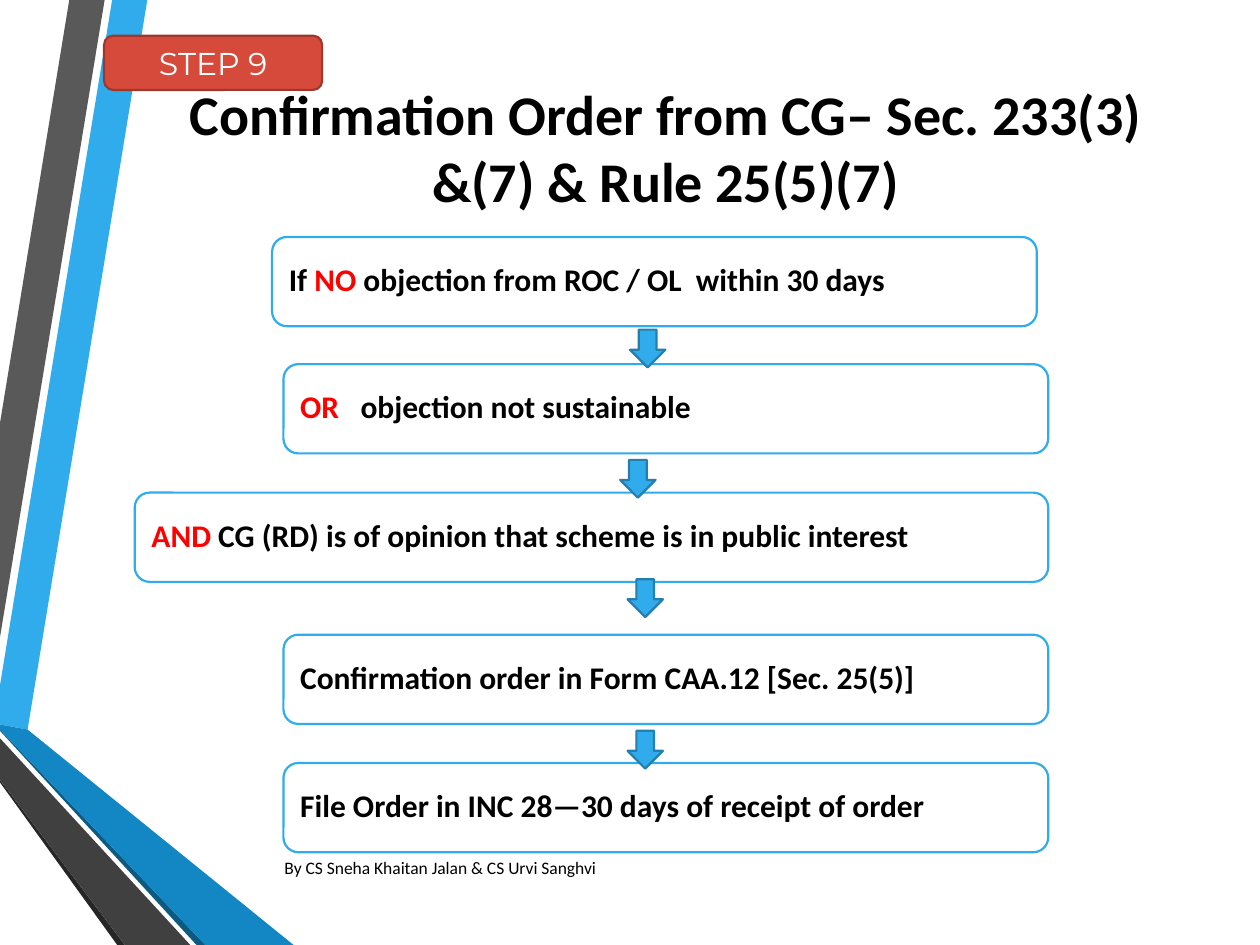
from pptx import Presentation
from pptx.dml.color import RGBColor
from pptx.enum.shapes import MSO_SHAPE as Shape
from pptx.enum.text import MSO_ANCHOR as Anchor, MSO_AUTO_SIZE as AutoSize, PP_ALIGN as Align
from pptx.util import Pt

COLORS = {
    "white": "FFFFFF", "black": "000000", "accent": "FF0000",
    "blue": "30ACEC", "blue_edge": "247FAF", "blue_mid": "1287C3", "blue_dark": "0C5A82",
    "red": "D64A3B", "red_edge": "9E372C",
    "gray": "595959", "gray_mid": "404040", "gray_dark": "262626",
}


class SlideBuilder:
    font = "Calibri"
    line_width = 1.25

    def __init__(self, slide):
        self.s = slide

    def color(self, name):
        return RGBColor.from_string(COLORS[name])

    def paint(self, sp, fill, line=None):
        sp.shadow.inherit = False
        sp.fill.solid()
        sp.fill.fore_color.rgb = self.color(fill)
        if line:
            sp.line.color.rgb = self.color(line)
            sp.line.width = Pt(self.line_width)
        else:
            sp.line.fill.background()

    def add_runs(self, sp, runs, size, bold=False, align=Align.LEFT, font=None, spacing=None):
        tf = sp.text_frame
        tf.word_wrap = True
        tf.auto_size = AutoSize.NONE
        tf.vertical_anchor = Anchor.MIDDLE
        p = tf.paragraphs[0]
        p.alignment = align
        if spacing:
            p.line_spacing = spacing
        for text, color in runs:
            r = p.add_run()
            r.text = text
            r.font.name = font or self.font
            r.font.size = Pt(size)
            r.font.bold = bold
            r.font.color.rgb = self.color(color)

    def band(self, fill, points):
        pts = [(Pt(x), Pt(y)) for x, y in points]
        builder = self.s.shapes.build_freeform(*pts[0])
        builder.add_line_segments(pts[1:], close=True)
        self.paint(builder.convert_to_shape(), fill)

    def shape(self, kind, x, y, w, h, fill, line):
        sp = self.s.shapes.add_shape(kind, Pt(x), Pt(y), Pt(w), Pt(h))
        self.paint(sp, fill, line)
        return sp

    def title(self, x, y, w, h, text):
        sp = self.s.shapes.title
        sp.left, sp.top, sp.width, sp.height = Pt(x), Pt(y), Pt(w), Pt(h)
        self.add_runs(sp, [(text, "black")], 32, bold=True, align=Align.CENTER)

    def caption(self, x, y, w, h, text):
        sp = self.s.shapes.add_textbox(Pt(x), Pt(y), Pt(w), Pt(h))
        self.add_runs(sp, [(text, "black")], 10)

    def badge(self, x, y, w, h, text):
        sp = self.shape(Shape.ROUNDED_RECTANGLE, x, y, w, h, "red", "red_edge")
        self.add_runs(sp, [(text, "white")], 18, align=Align.CENTER, font="Montserrat")

    def step(self, x, y, w, runs):
        sp = self.shape(Shape.ROUNDED_RECTANGLE, x, y, w, 51, "white", "blue")
        self.add_runs(sp, runs, 18, bold=True, align=Align.JUSTIFY, spacing=0.9)

    def arrow(self, x, y):
        self.shape(Shape.DOWN_ARROW, x, y, 20.2, 21.6, "blue", "blue_edge")


# Corner bands, back to front
BANDS = [
    ("blue", [(0, 391.7), (0, 414), (15.8, 416.9), (84.2, 0), (64.1, 0)]),
    ("gray", [(59.8, 0), (39.6, 0), (0, 241.9), (0, 364.3)]),
    ("gray_dark", [(0, 445.7), (0, 447.1), (67, 540), (71.3, 540)]),
    ("blue_dark", [(0, 416.9), (0, 417.6), (112.3, 540), (117.4, 540)]),
    ("blue_mid", [(0, 416.9), (117.4, 540), (167.8, 540), (15.8, 416.9), (0, 414)]),
    ("gray_mid", [(0, 445.7), (71.3, 540), (108.7, 540), (0, 421.9)]),
]

# Flow steps: left, top, width, runs
STEPS = [
    (155.5, 135.4, 437, [("If ", "black"), ("NO ", "accent"),
                         ("objection from ROC / OL  within 30 days", "black")]),
    (162, 208.1, 437, [("OR", "accent"), ("   objection not sustainable ", "black")]),
    (77, 281.5, 522, [("AND", "accent"),
                      (" CG (RD) is of opinion that scheme is in public interest", "black")]),
    (162, 362.7, 437, [("Confirmation order in Form CAA.12 [Sec. 25(5)]", "black")]),
    (162, 436, 437, [("File Order in INC 28—30 days of receipt of order", "black")]),
]
ARROWS = [(360, 188.4), (354.4, 262.8), (358.6, 331), (358.6, 417.6)]


def main():
    prs = Presentation()
    prs.slide_width, prs.slide_height = Pt(720), Pt(540)
    b = SlideBuilder(prs.slides.add_slide(prs.slide_layouts[5]))

    # Decoration
    for fill, points in BANDS:
        b.band(fill, points)

    # Heading, credit and step number
    b.title(77, 36, 607, 96, "Confirmation Order from CG– Sec. 233(3) &(7) & Rule 25(5)(7)")
    b.caption(155.5, 481, 418, 29, "By CS Sneha Khaitan Jalan & CS Urvi Sanghvi")
    b.badge(59.5, 20.4, 124.6, 31, "STEP 9")

    # Flow
    for step in STEPS:
        b.step(*step)
    for x, y in ARROWS:
        b.arrow(x, y)

    prs.save("out.pptx")


if __name__ == "__main__":
    main()
